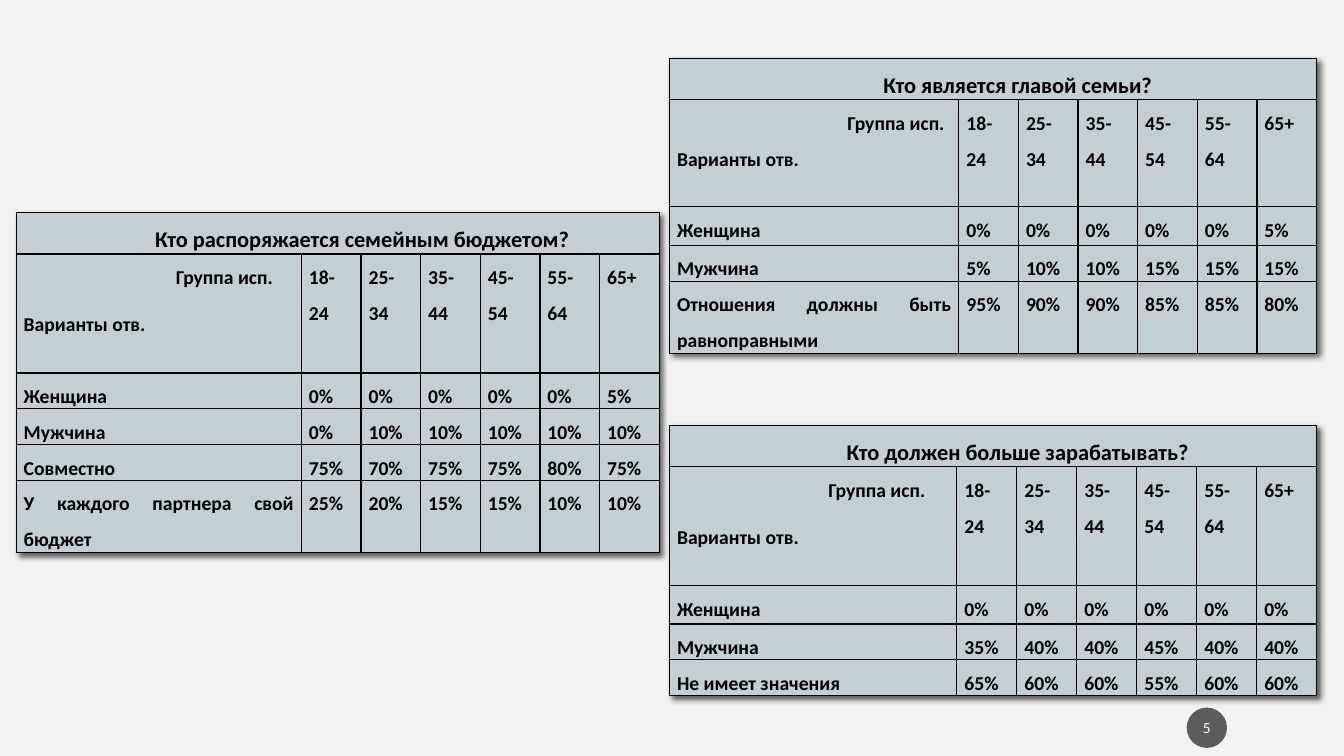
from lxml.etree import SubElement, fromstring
from pptx import Presentation
from pptx.dml.color import RGBColor
from pptx.enum.shapes import MSO_SHAPE
from pptx.enum.text import MSO_ANCHOR, PP_ALIGN
from pptx.oxml.ns import nsdecls, qn
from pptx.util import Inches, Pt

COLORS = {"bg": "F2F2F2", "cell": "C3CFD3", "ink": "000000",
          "badge": "1D1D1D", "number": "FFFFFF"}
UNIT = Inches(0.1)
AGES = ["18-24", "25-34", "35-44", "45-54", "55-64", "65+"]
HEAD_ROW = "Группа исп.\nВарианты отв."
ONE, TWO, TITLE = 3.55, 7.15, 4.1

SURVEYS = [
    dict(left=66.4, top=5.8, width=64.2, label=28.7,
         heights=[TITLE, 10.6, 3.85, ONE, TWO], indent=16.9, gap=0,
         title="Кто является главой семьи?",
         answers={"Женщина": [0, 0, 0, 0, 0, 5],
                  "Мужчина": [5, 10, 10, 15, 15, 15],
                  "Отношения должны быть равноправными": [95, 90, 90, 85, 85, 80]}),
    dict(left=1.6, top=21.1, width=63.8, label=28.3,
         heights=[TITLE, 11.8, ONE, ONE, ONE, TWO], indent=15.1, gap=8,
         title="Кто распоряжается семейным бюджетом?",
         answers={"Женщина": [0, 0, 0, 0, 0, 5],
                  "Мужчина": [0, 10, 10, 10, 10, 10],
                  "Совместно": [75, 70, 75, 75, 80, 75],
                  "У каждого партнера свой бюджет": [25, 20, 15, 15, 10, 10]}),
    dict(left=66.4, top=42.2, width=64.2, label=28.5,
         heights=[TITLE, 11.8, 3.8, ONE, ONE], indent=15, gap=8,
         title="Кто должен больше зарабатывать?",
         answers={"Женщина": [0, 0, 0, 0, 0, 0],
                  "Мужчина": [35, 40, 40, 45, 40, 40],
                  "Не имеет значения": [65, 60, 60, 55, 60, 60]}),
]


def units(n):
    """Convert grid units to a length."""
    return round(n * UNIT)


def rgb(name):
    """Look up a named colour."""
    return RGBColor.from_string(COLORS[name])


def style_font(p, size, color, bold=False):
    """Format every run of a paragraph."""
    for r in p.runs:
        r.font.name, r.font.size, r.font.bold = "Calibri", Pt(size), bold
        r.font.color.rgb = rgb(color)


def set_indent(p, n):
    """Indent the first line of a paragraph."""
    p._p.get_or_add_pPr().set("indent", str(units(n)))


def add_borders(cell):
    """Draw a black line on all four sides of a cell."""
    tcPr = cell._tc.get_or_add_tcPr()
    for i, side in enumerate(("lnL", "lnR", "lnT", "lnB")):
        ln = fromstring(
            f'<a:{side} {nsdecls("a")} w="12700"><a:solidFill>'
            f'<a:srgbClr val="{COLORS["ink"]}"/></a:solidFill></a:{side}>')
        tcPr.insert(i, ln)


def add_shadow(table):
    """Give a table a soft shadow to the lower right."""
    table._tbl.tblPr.insert(0, fromstring(
        f'<a:effectLst {nsdecls("a")}><a:outerShdw blurRad="50800" dist="38100" '
        f'dir="2700000" algn="tl" rotWithShape="0"><a:srgbClr val="{COLORS["ink"]}">'
        '<a:alpha val="60000"/></a:srgbClr></a:outerShdw></a:effectLst>'))


def fill_cell(cell, text):
    """Write and format one table cell."""
    cell.fill.solid()
    cell.fill.fore_color.rgb = rgb("cell")
    add_borders(cell)
    cell.margin_left = cell.margin_right = units(0.75)
    cell.margin_top = cell.margin_bottom = 0
    tf = cell.text_frame
    tf.text = text
    for p in tf.paragraphs:
        p.alignment, p.line_spacing, p.space_after = PP_ALIGN.JUSTIFY, 1.5, Pt(8)
        style_font(p, 14, "ink", True)


def add_survey(s, left, top, width, label, heights, indent, gap, title, answers):
    """Add one survey table."""
    n = len(AGES)
    rows = [[title] + [""] * n, [HEAD_ROW] + AGES]
    rows += [[name] + [f"{v}%" for v in values] for name, values in answers.items()]
    table = s.shapes.add_table(len(rows), n + 1, *map(
        units, (left, top, width, sum(heights)))).table
    table.first_row = table.horz_banding = False
    add_shadow(table)
    for col, w in zip(table.columns, [label] + [(width - label) / n] * n):
        col.width = units(w)
    for row, h in zip(table.rows, heights):
        row.height = units(h)
    for i, row in enumerate(rows):
        for j, text in enumerate(row):
            fill_cell(table.cell(i, j), text)
    head = table.cell(0, 0)
    head.merge(table.cell(0, n))
    p = head.text_frame.paragraphs[0]
    p.alignment = PP_ALIGN.CENTER
    set_indent(p, 4.9)
    style_font(p, 16, "ink", True)
    group = table.cell(1, 0).text_frame.paragraphs[0]
    group.space_after = Pt(gap)
    set_indent(group, indent)


def add_badge(s, text):
    """Add the round, partly transparent page number below the tables."""
    sp = s.shapes.add_shape(MSO_SHAPE.OVAL, *map(units, (117.7, 70.2, 4, 4)))
    sp.shadow.inherit = False
    sp.fill.solid()
    sp.fill.fore_color.rgb = rgb("badge")
    color = sp._element.spPr.find(qn("a:solidFill"))[0]
    SubElement(color, qn("a:alpha")).set("val", "70000")
    sp.line.fill.background()
    tf = sp.text_frame
    tf.margin_left = tf.margin_right = units(0.2)
    tf.vertical_anchor = MSO_ANCHOR.MIDDLE
    tf.text = text
    p = tf.paragraphs[0]
    p.alignment = PP_ALIGN.CENTER
    style_font(p, 11, "number")


def main():
    """Build the slide and save it."""
    prs = Presentation()
    prs.slide_width, prs.slide_height = Inches(13.33), Inches(7.5)
    s = prs.slides.add_slide(prs.slide_layouts[6])
    s.background.fill.solid()
    s.background.fill.fore_color.rgb = rgb("bg")
    for survey in SURVEYS:
        add_survey(s, **survey)
    add_badge(s, "5")
    prs.save("out.pptx")


if __name__ == "__main__":
    main()
